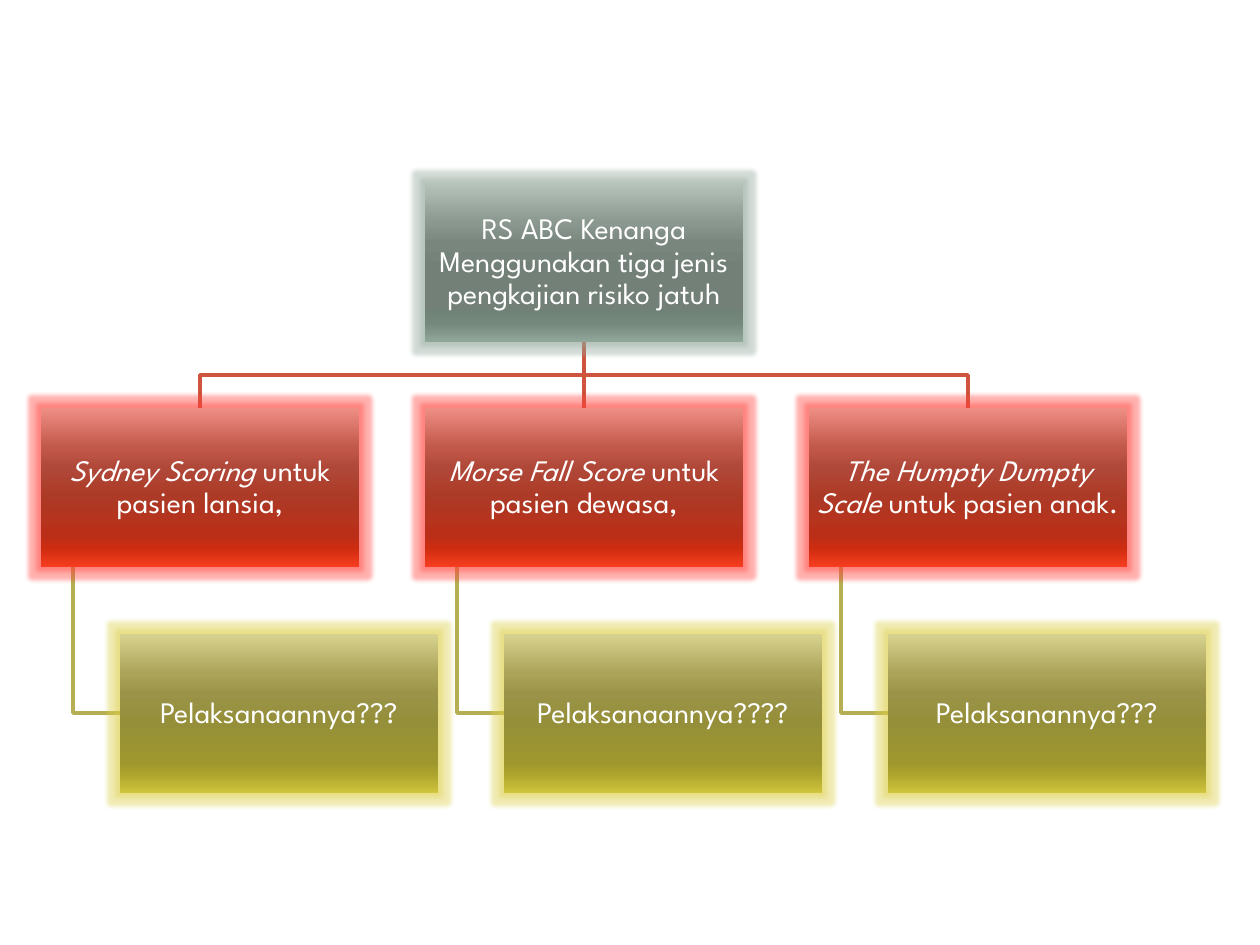
"""Build the fall-risk assessment hierarchy slide."""
from dataclasses import dataclass
from typing import NamedTuple

from lxml.etree import SubElement
from pptx import Presentation
from pptx.dml.color import RGBColor
from pptx.enum.shapes import MSO_CONNECTOR, MSO_SHAPE
from pptx.enum.text import MSO_ANCHOR, PP_ALIGN
from pptx.oxml.ns import qn
from pptx.util import Emu, Pt

EMU_PER_PX = 914400 / 126


class Level(NamedTuple):
    colours: tuple[str, ...]
    glow: str


@dataclass(frozen=True)
class Theme:
    font: str = "League Spartan"
    text_size: int = 17
    text_colour: str = "FFFFFF"
    line_width: int = 2
    glow_radius: int = 5
    glow_alpha: int = 40
    stops: tuple[int, ...] = (0, 25, 38, 55, 80, 88, 100)
    branch_line: str = "CF543F"
    leaf_line: str = "B5AE53"
    root: Level = Level(
        ("B6C3BB", "8B9890", "79867E", "728078", "708176", "75887C", "91A79A"), "91A79A")
    branch: Level = Level(
        ("EF8E85", "C1584A", "B04839", "AD3A26", "BA2F18", "CD2C10", "F63D1F"), "FF4038")
    leaf: Level = Level(
        ("D8D290", "AAA358", "9A9348", "958F39", "9E962F", "ACA32C", "D0C53D"), "DCCF45")


@dataclass(frozen=True)
class Branch:
    scale: str
    patients: str
    question: str


THEME = Theme()
BRANCHES = (
    Branch("Sydney Scoring ", "untuk pasien lansia,", "Pelaksanaannya???"),
    Branch("Morse Fall Score ", "untuk pasien dewasa,", "Pelaksanaannya????"),
    Branch("The Humpty Dumpty Scale ", "untuk pasien anak.", "Pelaksanannya???"),
)
ROOT_TEXT = "RS ABC Kenanga Menggunakan tiga jenis pengkajian risiko jatuh"
BOX_WIDTH, BOX_HEIGHT = 318, 159
LEFT, COLUMN_STEP = 41, 384
ROOT_TOP, BRANCH_TOP, LEAF_TOP = 183, 408, 634
LEAF_INDENT, STEM_INDENT = 79, 32
MIDDLE = len(BRANCHES) // 2


def px(value: int) -> Emu:
    """Convert whole pixels to EMU."""
    return Emu(round(value * EMU_PER_PX))


def style_line(shape, colour: str) -> None:
    """Give a line its colour and width without a shadow."""
    shape.line.color.rgb = RGBColor.from_string(colour)
    shape.line.width = Pt(THEME.line_width)


def add_elbow(slide, points: list[tuple[int, int]], colour: str) -> None:
    """Draw an open, unfilled polyline."""
    builder = slide.shapes.build_freeform(*points[0], scale=EMU_PER_PX)
    builder.add_line_segments(points[1:], close=False)
    shape = builder.convert_to_shape()
    shape.fill.background()
    shape.shadow.inherit = False
    style_line(shape, colour)


def paint_box(shape, level: Level) -> None:
    """Apply the level's vertical gradient and soft glow."""
    shape.shadow.inherit = False
    shape.line.fill.background()
    shape.fill.gradient()
    shape.fill.gradient_angle = 270
    properties = shape._element.spPr
    stop_list = properties.find(qn("a:gradFill")).find(qn("a:gsLst"))
    for stop in list(stop_list):
        stop_list.remove(stop)
    for position, colour in zip(THEME.stops, level.colours):
        stop = SubElement(stop_list, qn("a:gs"), pos=str(position * 1000))
        SubElement(stop, qn("a:srgbClr"), val=colour)
    glow = SubElement(properties.find(qn("a:effectLst")), qn("a:glow"),
                      rad=str(Pt(THEME.glow_radius)))
    glow_colour = SubElement(glow, qn("a:srgbClr"), val=level.glow)
    SubElement(glow_colour, qn("a:alpha"), val=str(THEME.glow_alpha * 1000))


def add_box(slide, left: int, top: int, level: Level, text: str, italic_lead: str = ""):
    """Draw a glowing box with centred text and an optional italic lead."""
    shape = slide.shapes.add_shape(
        MSO_SHAPE.RECTANGLE, px(left), px(top), px(BOX_WIDTH), px(BOX_HEIGHT))
    paint_box(shape, level)
    frame = shape.text_frame
    frame.word_wrap = True
    frame.vertical_anchor = MSO_ANCHOR.MIDDLE
    frame.margin_left = frame.margin_right = px(1)
    frame.margin_top = frame.margin_bottom = px(1)
    frame.text = italic_lead or text
    paragraph = frame.paragraphs[0]
    paragraph.alignment = PP_ALIGN.CENTER
    paragraph.line_spacing = 0.9
    if italic_lead:
        paragraph.runs[0].font.italic = True
        paragraph.add_run().text = text
    for run in paragraph.runs:
        run.font.name = THEME.font
        run.font.size = Pt(THEME.text_size)
        run.font.color.rgb = RGBColor.from_string(THEME.text_colour)
    return shape


def add_trunk(slide, root, branch) -> None:
    """Join the root to the branch below it, behind the boxes."""
    connector = slide.shapes.add_connector(MSO_CONNECTOR.STRAIGHT, 0, 0, 0, 0)
    connector.begin_connect(root, 2)
    connector.end_connect(branch, 0)
    style_line(connector, THEME.branch_line)
    element = connector._element
    SubElement(element.spPr, qn("a:effectLst"))
    element.getparent().insert(2, element)


def add_elbows(slide, left: int, root_centre: int) -> None:
    """Draw the bent lines of one column."""
    centre = left + BOX_WIDTH // 2
    root_bottom = ROOT_TOP + BOX_HEIGHT
    bend = (root_bottom + BRANCH_TOP) // 2
    if centre != root_centre:
        add_elbow(slide, [(root_centre, root_bottom), (root_centre, bend),
                          (centre, bend), (centre, BRANCH_TOP)], THEME.branch_line)
    stem = left + STEM_INDENT
    leaf_middle = LEAF_TOP + BOX_HEIGHT // 2
    add_elbow(slide, [(stem, BRANCH_TOP + BOX_HEIGHT), (stem, leaf_middle),
                      (left + LEAF_INDENT, leaf_middle)], THEME.leaf_line)


def main() -> None:
    """Create the slide and save it."""
    presentation = Presentation()
    presentation.slide_width, presentation.slide_height = px(1260), px(945)
    slide = presentation.slides.add_slide(presentation.slide_layouts[6])
    columns = [LEFT + index * COLUMN_STEP for index in range(len(BRANCHES))]
    root_left = columns[MIDDLE]
    for left in columns:
        add_elbows(slide, left, root_left + BOX_WIDTH // 2)
    root = add_box(slide, root_left, ROOT_TOP, THEME.root, ROOT_TEXT)
    branch_boxes = []
    for left, branch in zip(columns, BRANCHES):
        branch_boxes.append(
            add_box(slide, left, BRANCH_TOP, THEME.branch, branch.patients, branch.scale))
        add_box(slide, left + LEAF_INDENT, LEAF_TOP, THEME.leaf, branch.question)
    add_trunk(slide, root, branch_boxes[MIDDLE])
    presentation.save("out.pptx")


if __name__ == "__main__":
    main()
